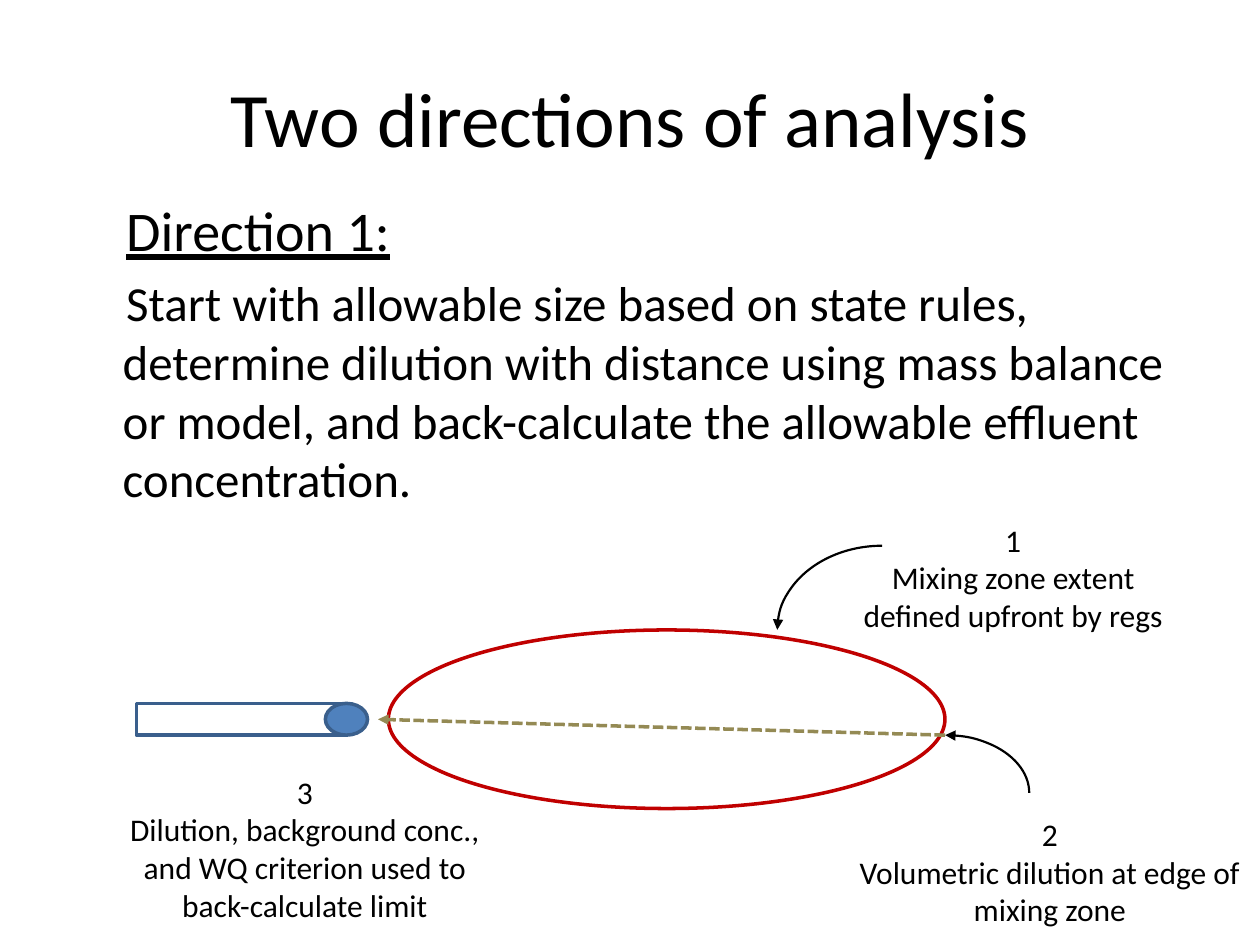
from lxml.etree import SubElement
from pptx import Presentation
from pptx.dml.color import RGBColor
from pptx.enum.dml import MSO_LINE_DASH_STYLE as Dash
from pptx.enum.shapes import MSO_CONNECTOR_TYPE as Connector, MSO_SHAPE as Shape
from pptx.enum.text import MSO_ANCHOR, MSO_AUTO_SIZE, PP_ALIGN
from pptx.oxml.ns import qn
from pptx.util import Cm, Pt

FONT = "Calibri"
BLACK, PIPE_LINE, PIPE_FILL = "000000", "3A5F8C", "4F81BD"
ZONE_RED, PATH_TAN = "C00000", "948A54"

# Boxes are left, top, width, height in cm
TITLE = "Two directions of analysis"
TITLE_BOX = (1.27, 0.76, 22.86, 3.18)
BODY_BOX = (1.27, 3.81, 22.86, 7.62)
BODY = [  # text, size, underlined
    ("Direction 1:", 32, True),
    ("Start with allowable size based on state rules, determine dilution with "
     "distance using mass balance or model, and back-calculate the allowable "
     "effluent concentration.", 28, False),
]
SHAPES = [  # preset, box, fill, line colour, line width
    (Shape.RECTANGLE, (2.75, 14.18, 4.23, 0.64), None, PIPE_LINE, 2),
    (Shape.OVAL, (6.56, 14.18, 0.85, 0.64), PIPE_FILL, PIPE_LINE, 2),
    (Shape.OVAL, (7.83, 12.7, 11.22, 3.6), None, ZONE_RED, 2),
]
ARCS = [  # box, rotation
    ((17.36, 14.82, 3.39, 2.33), 0),
    ((16.09, 10.58, 3.39, 4.23), 270),
]
DILUTION_PATH = (19.05, 14.82, 7.62, 14.5)
STEPS = [  # number, note, box
    ("1", "Mixing zone extent defined upfront by regs", (16.93, 10.37, 6.99, 2.56)),
    ("2", "Volumetric dilution at edge of mixing zone", (16.93, 16.3, 8.47, 2.56)),
    ("3", "Dilution, background conc., and WQ criterion used to back-calculate limit",
     (1.91, 15.45, 8.47, 3.33)),
]


def cm(values):
    return [Cm(v) for v in values]


def rgb(value):
    return RGBColor.from_string(value)


def place(sp, box):
    sp.left, sp.top, sp.width, sp.height = cm(box)


def style_text(p, size, underline=None):
    for r in p.runs:
        r.font.name, r.font.size = FONT, Pt(size)
        r.font.color.rgb = rgb(BLACK)
        r.font.underline = underline


def style_line(sp, color, width):
    sp.line.color.rgb = rgb(color)
    sp.line.width = Pt(width)


def add_arrowhead(sp, end):
    """Put a triangle at the headEnd (start) or tailEnd (finish) of a line."""
    SubElement(sp.line._get_or_add_ln(), qn(f"a:{end}"), type="triangle")


def add_outline(s, preset, box, fill, color, width):
    sp = s.shapes.add_shape(preset, *cm(box))
    sp.shadow.inherit = False
    if fill:
        sp.fill.solid()
        sp.fill.fore_color.rgb = rgb(fill)
    else:
        sp.fill.background()
    style_line(sp, color, width)
    return sp


def add_title_and_body(s):
    title, body = s.shapes.title, s.placeholders[1]
    place(title, TITLE_BOX)
    title.text_frame.text = TITLE
    title.text_frame.vertical_anchor = MSO_ANCHOR.MIDDLE
    style_text(title.text_frame.paragraphs[0], 44)

    place(body, BODY_BOX)
    tf = body.text_frame
    tf.text = "\n".join(text for text, _, _ in BODY)
    for p, (_, size, underline) in zip(tf.paragraphs, BODY):
        pPr = p._p.get_or_add_pPr()
        pPr.set("marL", str(Cm(0.95)))
        pPr.set("indent", str(Cm(0.07)))
        SubElement(pPr, qn("a:buNone"))
        style_text(p, size, underline)


def add_step(s, number, note, box):
    tf = s.shapes.add_textbox(*cm(box)).text_frame
    tf.word_wrap = True
    tf.auto_size = MSO_AUTO_SIZE.SHAPE_TO_FIT_TEXT
    tf.text = f"{number}\n{note}"
    for p in tf.paragraphs:
        p.alignment = PP_ALIGN.CENTER
        style_text(p, 18)


def add_dilution_path(s):
    line = s.shapes.add_connector(Connector.STRAIGHT, *cm(DILUTION_PATH))
    style_line(line, PATH_TAN, 2)
    line.line.dash_style = Dash.SQUARE_DOT
    add_arrowhead(line, "tailEnd")
    SubElement(line._element.spPr, qn("a:effectLst"))


def main():
    prs = Presentation()
    prs.slide_width, prs.slide_height = Cm(25.4), Cm(19.05)
    s = prs.slides.add_slide(prs.slide_layouts[1])
    add_title_and_body(s)
    for shape in SHAPES:
        add_outline(s, *shape)
    for box, rotation in ARCS:
        arc = add_outline(s, Shape.ARC, box, None, BLACK, 1.25)
        arc.rotation = rotation
        add_arrowhead(arc, "headEnd")
    add_dilution_path(s)
    for step in STEPS:
        add_step(s, *step)
    prs.save("out.pptx")


if __name__ == "__main__":
    main()
